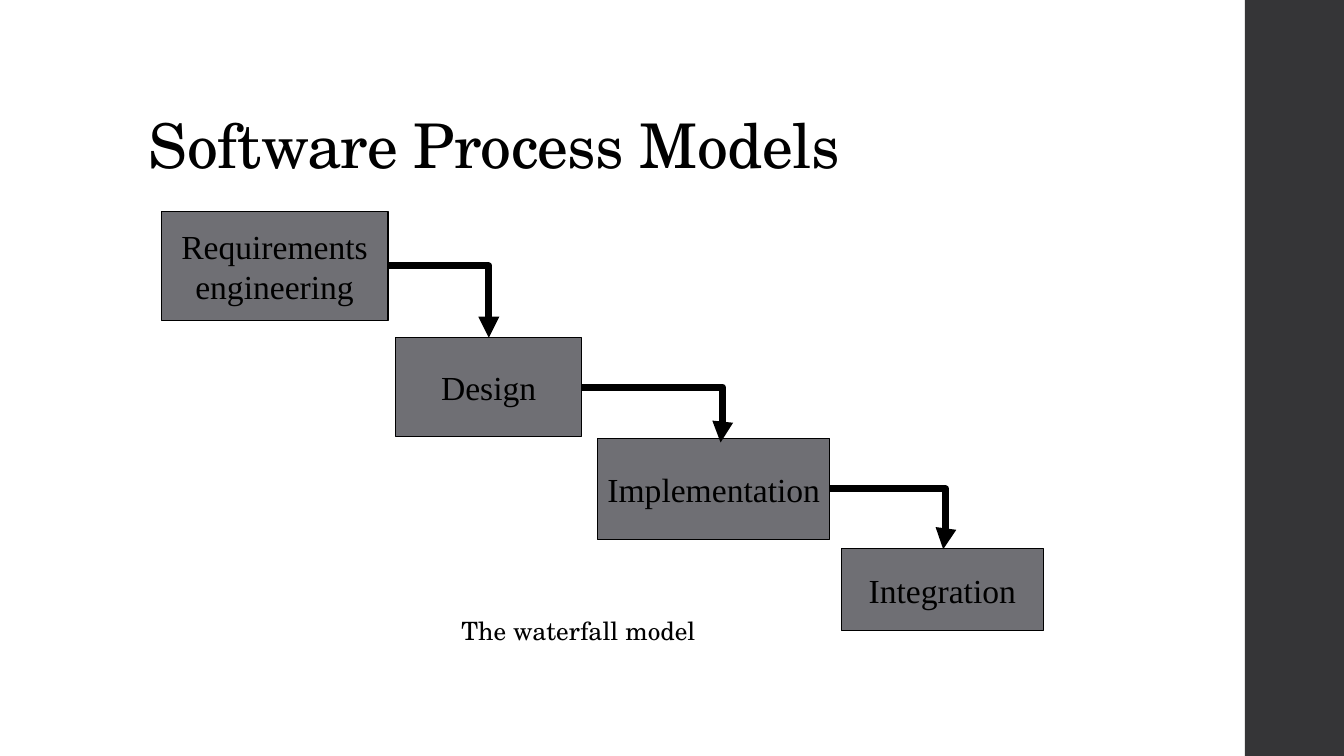
from lxml import etree
from pptx import Presentation
from pptx.dml.color import RGBColor
from pptx.enum.shapes import MSO_CONNECTOR, MSO_SHAPE
from pptx.enum.text import MSO_ANCHOR, MSO_AUTO_SIZE, PP_ALIGN
from pptx.oxml.ns import qn
from pptx.util import Cm, Pt

RECT = MSO_SHAPE.RECTANGLE
ELBOW = MSO_CONNECTOR.ELBOW
LEFT, CENTER = PP_ALIGN.LEFT, PP_ALIGN.CENTER
MIDDLE, BOTTOM = MSO_ANCHOR.MIDDLE, MSO_ANCHOR.BOTTOM
NO_FIT, GROW = MSO_AUTO_SIZE.NONE, MSO_AUTO_SIZE.SHAPE_TO_FIT_TEXT

COLORS = {"sidebar": "353537", "stage": "6F6F74", "ink": "000000"}
HEAD_FONT = "TeX Gyre Schola"
STAGE_FONT = "Times New Roman"

STAGES = [
    ("Requirements\nengineering", (4.06, 5.33, 5.72, 2.74)),
    ("Design", (9.98, 8.51, 4.67, 2.49)),
    ("Implementation", (15.07, 11.05, 5.84, 2.54)),
    ("Integration", (21.21, 13.82, 5.08, 2.08)),
]
ARROWS = [
    ((12.32, 8.51), "bentConnector2", None),
    ((18.16, 11.15), "bentConnector3", 101400),
    ((23.77, 13.84), "bentConnector3", 102200),
]


def color(name):
    return RGBColor.from_string(COLORS[name])


def write(tf, text, font=HEAD_FONT, size=18, align=LEFT, anchor=None,
          wrap=False, fit=NO_FIT, leading=None, tracking=None):
    tf.word_wrap = wrap
    tf.auto_size = fit
    if anchor is not None:
        tf.vertical_anchor = anchor
    for i, line in enumerate(text.split("\n")):
        p = tf.add_paragraph() if i else tf.paragraphs[0]
        p.alignment = align
        p.line_spacing = leading
        r = p.add_run()
        r.text = line
        r.font.name = font
        r.font.size = Pt(size)
        r.font.color.rgb = color("ink")
        if tracking is not None:
            r.font._element.set("spc", str(tracking))


def add_sidebar(slide, box):
    sp = slide.shapes.add_shape(RECT, *map(Cm, box))
    sp.shadow.inherit = False
    sp.fill.solid()
    sp.fill.fore_color.rgb = color("sidebar")
    sp.line.fill.background()


def add_title(slide, box):
    sp = slide.shapes.title
    sp.left, sp.top, sp.width, sp.height = map(Cm, box)
    write(sp.text_frame, "Software Process Models", size=44, anchor=BOTTOM,
          wrap=True, leading=0.9, tracking=-50)


def add_stage(slide, text, box):
    sp = slide.shapes.add_shape(RECT, *map(Cm, box))
    sp.shadow.inherit = False
    sp.fill.solid()
    sp.fill.fore_color.rgb = color("stage")
    sp.line.color.rgb = color("ink")
    sp.line.width = Pt(0.75)
    write(sp.text_frame, text, font=STAGE_FONT, size=24, align=CENTER, anchor=MIDDLE)


def add_arrow(slide, box, tip, bend, adjust):
    x, y, w, h = box
    sp = slide.shapes.add_connector(ELBOW, Cm(x + w), Cm(y + h / 2), *map(Cm, tip))
    sp.line.color.rgb = color("ink")
    sp.line.width = Pt(5)
    etree.SubElement(sp.line._get_or_add_ln(), qn("a:tailEnd"), type="triangle")
    spPr = sp._element.spPr
    etree.SubElement(spPr, qn("a:effectLst"))
    geom = spPr.find(qn("a:prstGeom"))
    geom.set("prst", bend)
    if adjust is not None:
        guides = geom.find(qn("a:avLst"))
        if guides is None:
            guides = etree.SubElement(geom, qn("a:avLst"))
        etree.SubElement(guides, qn("a:gd"), name="adj1", fmla=f"val {adjust}")


def add_waterfall(slide):
    for text, box in STAGES:
        add_stage(slide, text, box)
    for (_, box), arrow in zip(STAGES, ARROWS):
        add_arrow(slide, box, *arrow)


def add_caption(slide, box):
    sp = slide.shapes.add_textbox(*map(Cm, box))
    write(sp.text_frame, "The waterfall model", fit=GROW)


def main():
    prs = Presentation()
    prs.slide_width, prs.slide_height = Cm(33.87), Cm(19.05)
    slide = prs.slides.add_slide(prs.slide_layouts[5])
    add_sidebar(slide, (31.37, 0, 2.5, 19.05))
    add_title(slide, (3.5, 1.02, 26.92, 3.68))
    add_waterfall(slide)
    add_caption(slide, (11.38, 15.37, 6.65, 1.02))
    prs.save("out.pptx")


if __name__ == "__main__":
    main()
